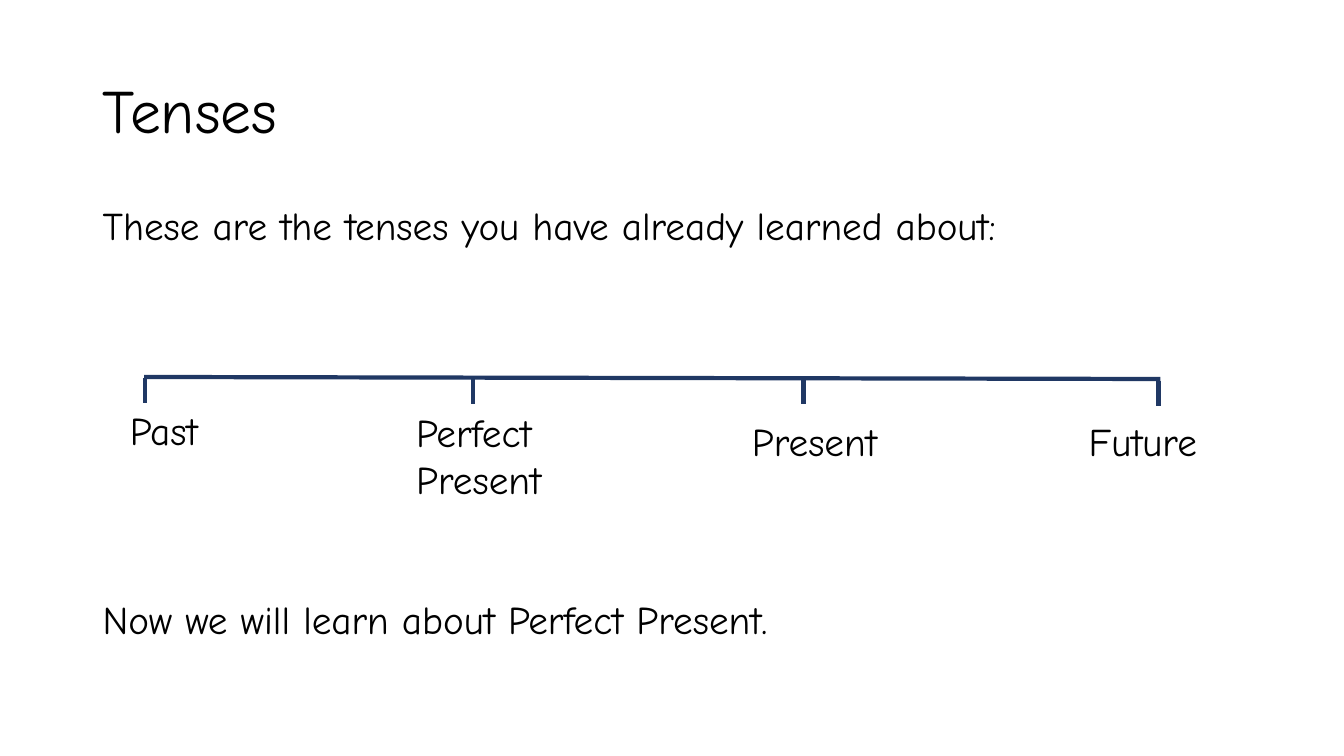
import pptx
import pptx.dml.color
import pptx.enum.shapes
import pptx.enum.text
import pptx.oxml.ns
import pptx.util
from pptx.util import Inches
from lxml import etree

FONT = "Comic Neue"
BLACK = pptx.dml.color.RGBColor(0x00, 0x00, 0x00)
NAVY = pptx.dml.color.RGBColor(0x20, 0x38, 0x64)

TICK_LENGTH = 0.25
# Tick position (x, y) on the timeline, then label text and its box
TENSES = [
    (1.44, 3.75, "Past", (1.19, 3.98, 1.57, 0.57)),
    (4.69, 3.76, "Perfect Present", (4.03, 4.0, 2.09, 1.04)),
    (7.97, 3.76, "Present", (7.36, 4.09, 1.83, 0.57)),
    (11.49, 3.78, "Future", (10.7, 4.09, 1.57, 0.57)),
]


def add_run(paragraph, text, size=28):
    paragraph.alignment = pptx.enum.text.PP_ALIGN.LEFT
    run = paragraph.add_run()
    run.text = text
    run.font.name = FONT
    run.font.size = pptx.util.Pt(size)
    run.font.color.rgb = BLACK


def add_title(slide, text):
    title = slide.shapes.title
    title.left, title.top = Inches(0.92), Inches(0.4)
    title.width, title.height = Inches(11.5), Inches(1.45)
    frame = title.text_frame
    frame.auto_size = pptx.enum.text.MSO_AUTO_SIZE.NONE
    frame.vertical_anchor = pptx.enum.text.MSO_ANCHOR.MIDDLE
    frame.paragraphs[0].line_spacing = 0.9
    add_run(frame.paragraphs[0], text, 44)


def add_text_box(slide, box):
    """Add a wrapping text box and return its text frame."""
    frame = slide.shapes.add_textbox(*map(Inches, box)).text_frame
    frame.word_wrap = True
    return frame


def add_body(slide, opening, closing):
    """Add the two sentences, with room between them for the timeline."""
    frame = add_text_box(slide, (0.92, 2, 11.5, 4.76))
    for paragraph, text, space in (
        (frame.paragraphs[0], opening, 0),
        (frame.add_paragraph(), closing, 251),
    ):
        paragraph.line_spacing = 0.9
        paragraph.space_before = pptx.util.Pt(space)
        add_run(paragraph, text)


def add_line(slide, start_x, start_y, end_x, end_y):
    line = slide.shapes.add_connector(
        pptx.enum.shapes.MSO_CONNECTOR.STRAIGHT,
        *map(Inches, (start_x, start_y, end_x, end_y)),
    )
    line.line.color.rgb = NAVY
    line.line.width = pptx.util.Pt(3)
    etree.SubElement(line._element.spPr, pptx.oxml.ns.qn("a:effectLst"))


def add_label(slide, text, box):
    frame = add_text_box(slide, box)
    frame.auto_size = pptx.enum.text.MSO_AUTO_SIZE.SHAPE_TO_FIT_TEXT
    add_run(frame.paragraphs[0], text)


def add_timeline(slide):
    add_line(slide, 1.43, 3.74, 11.51, 3.76)
    for x, y, text, box in TENSES:
        add_line(slide, x, y, x, y + TICK_LENGTH)
        add_label(slide, text, box)


def main():
    presentation = pptx.Presentation()
    presentation.slide_width = Inches(13.33)
    presentation.slide_height = Inches(7.5)
    slide = presentation.slides.add_slide(presentation.slide_layouts[5])
    add_title(slide, "Tenses")
    add_body(
        slide,
        "These are the tenses you have already learned about:",
        "Now we will learn about Perfect Present.",
    )
    add_timeline(slide)
    presentation.save("out.pptx")


if __name__ == "__main__":
    main()
